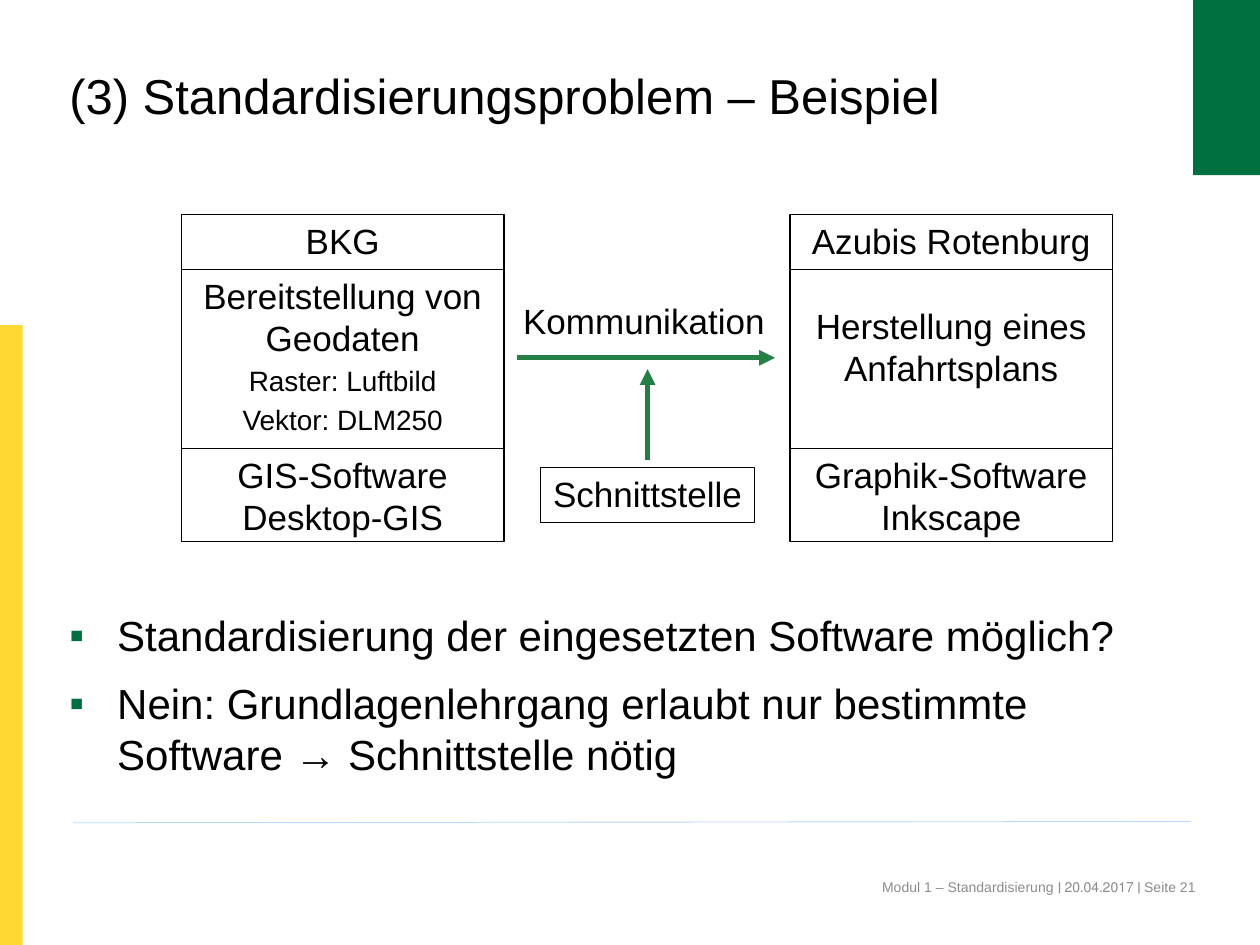
"""Build the slide on the standardisation problem between two partners."""
from dataclasses import dataclass

from lxml import etree
from pptx import Presentation
from pptx.dml.color import RGBColor
from pptx.enum import shapes, text
from pptx.oxml import ns
from pptx.util import Inches, Pt


@dataclass(frozen=True)
class Theme:
    font: str = "Arial"
    ink: str = "000000"
    green: str = "007040"
    arrow: str = "237F44"
    yellow: str = "FFD833"
    rule: str = "B7DAFD"
    grey: str = "8C8C8C"
    title: int = 28
    body: int = 24
    label: int = 20
    small: int = 16
    foot: int = 8


look = Theme()
tint = RGBColor.from_string


def write(shape, lines, sizes, color=look.ink, align=text.PP_ALIGN.CENTER,
          pads=(0.08, 0.04, 0.08, 0.04), gap=3):
    frame = shape.text_frame
    frame.text = "\n".join(lines)
    frame.word_wrap = True
    frame.auto_size = text.MSO_AUTO_SIZE.NONE
    frame.vertical_anchor = text.MSO_ANCHOR.TOP
    frame.margin_left, frame.margin_top, frame.margin_right, frame.margin_bottom = map(Inches, pads)
    for i, (para, size) in enumerate(zip(frame.paragraphs, sizes)):
        para.alignment = align
        para.space_before = Pt(gap if i else 0)
        for run in para.runs:
            run.font.name = look.font
            run.font.size = Pt(size)
            run.font.color.rgb = tint(color)


def draw(start, end, color, width, head=False):
    line = slide.shapes.add_connector(shapes.MSO_CONNECTOR.STRAIGHT, *map(Inches, start + end))
    line.line.color.rgb = tint(color)
    line.line.width = Pt(width)
    if head:
        etree.SubElement(line.line._get_or_add_ln(), ns.qn("a:tailEnd"), type="triangle")
    etree.SubElement(line._element.spPr, ns.qn("a:effectLst"))


deck = Presentation()
deck.slide_width, deck.slide_height = Inches(10), Inches(7.5)
slide = deck.slides.add_slide(deck.slide_layouts[1])

for box, color in [((0, 2.58, 0.18, 4.92), look.yellow), ((9.47, -0.02, 0.53, 1.41), look.green)]:
    bar = slide.shapes.add_shape(shapes.MSO_SHAPE.RECTANGLE, *map(Inches, box))
    bar.shadow.inherit = False
    bar.fill.solid()
    bar.fill.fore_color.rgb = tint(color)
    bar.line.fill.background()

foot = slide.shapes.add_textbox(*map(Inches, (5, 6.97, 4.49, 0.4)))
write(foot, ["Modul 1 – Standardisierung ׀ 20.04.2017 ׀ Seite 21"], [look.foot],
      look.grey, text.PP_ALIGN.RIGHT, (0, 0, 0, 0.05))
draw((0.58, 6.53), (9.45, 6.52), look.rule, 0.5)

title, body = slide.shapes.title, slide.placeholders[1]
for shape, box in [(title, (0.55, 0.53, 8.24, 1.01)), (body, (0.55, 4.84, 8.92, 1.59))]:
    shape.left, shape.top, shape.width, shape.height = map(Inches, box)

write(title, ["(3) Standardisierungsproblem – Beispiel"], [look.title],
      align=text.PP_ALIGN.LEFT, pads=(0, 0, 0, 0))
title.text_frame.paragraphs[0].line_spacing = Pt(33)

points = ["Standardisierung der eingesetzten Software möglich?",
          "Nein: Grundlagenlehrgang erlaubt nur bestimmte Software → Schnittstelle nötig"]
write(body, points, [look.body] * 2, align=text.PP_ALIGN.LEFT, pads=(0, 0, 0, 0), gap=10)
for para in body.text_frame.paragraphs:
    props = para._p.get_or_add_pPr()
    props.set("marL", str(Inches(0.38)))
    props.set("indent", str(Inches(-0.38)))
    hue = etree.SubElement(props, ns.qn("a:buClr"))
    etree.SubElement(hue, ns.qn("a:srgbClr"), val=look.green)
    etree.SubElement(props, ns.qn("a:buFont"), typeface=look.font)
    etree.SubElement(props, ns.qn("a:buChar"), char="▪")

wide, rows = 2.56, [(1.7, 0.44), (2.14, 1.42), (3.56, 0.74)]
sides = [
    (1.44, [["BKG"], ["Bereitstellung von Geodaten", "Raster: Luftbild", "Vektor: DLM250"],
            ["GIS-Software\vDesktop-GIS"]]),
    (6.27, [["Azubis Rotenburg"], ["Herstellung eines Anfahrtsplans"],
            ["Graphik-Software Inkscape"]]),
]
cells = [((left, top, wide, high), lines)
         for left, parts in sides for (top, high), lines in zip(rows, parts)]
cells.append(((4.29, 3.71, 1.7, 0.44), ["Schnittstelle"]))
for box, lines in cells:
    cell = slide.shapes.add_shape(shapes.MSO_SHAPE.RECTANGLE, *map(Inches, box))
    cell.shadow.inherit = False
    cell.fill.background()
    cell.line.color.rgb = tint(look.ink)
    cell.line.width = Pt(0.75)
    inset = 0.28 if lines[0].startswith("Herstellung") else 0.04
    write(cell, lines, [look.label, look.small, look.small], pads=(0.08, inset, 0.08, 0.04))

label = slide.shapes.add_textbox(*map(Inches, (4.07, 2.34, 2.08, 0.44)))
write(label, ["Kommunikation"], [look.label])
draw((4.1, 2.84), (6.15, 2.84), look.arrow, 3, head=True)
draw((5.14, 3.65), (5.14, 2.93), look.arrow, 3, head=True)

deck.save("out.pptx")
